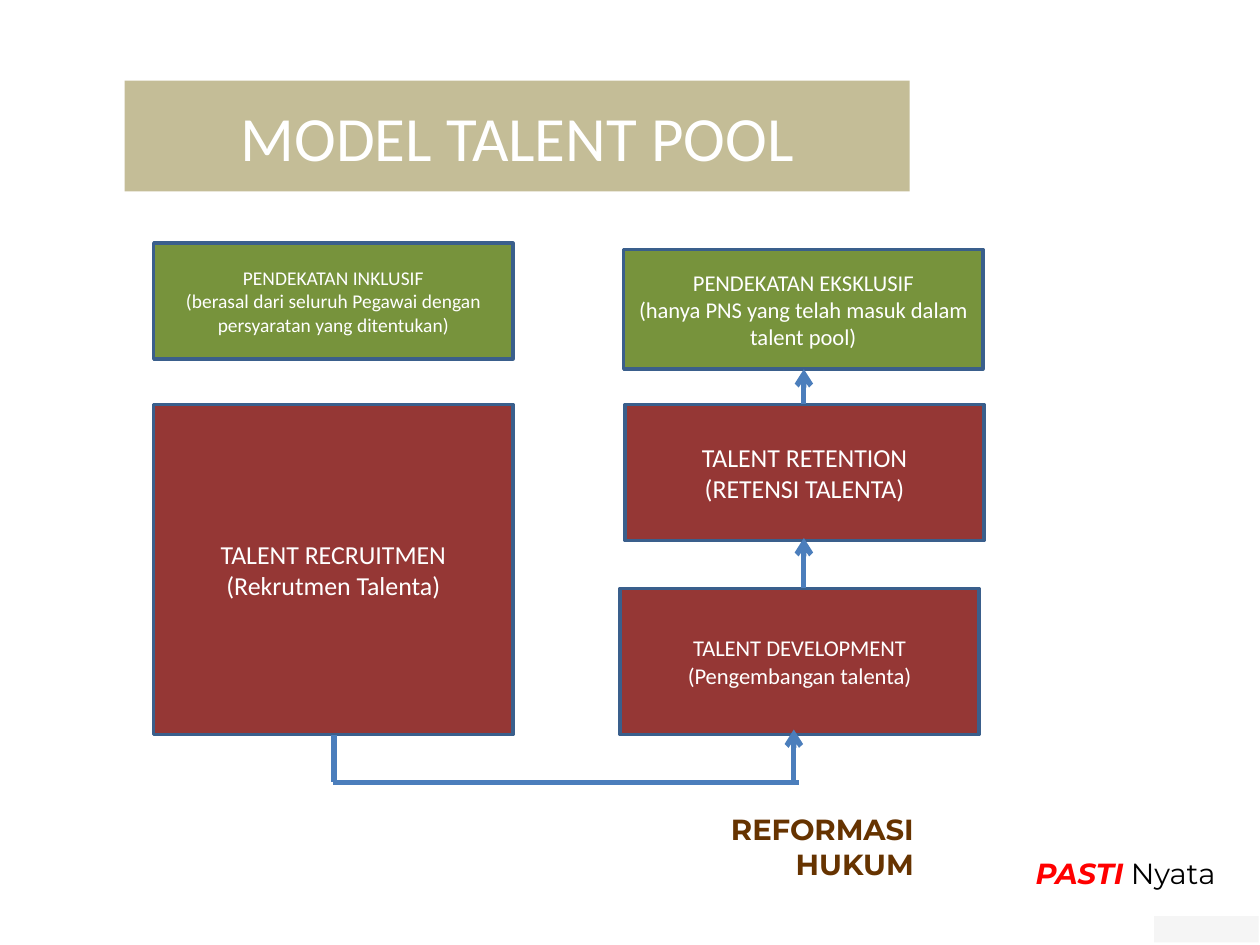
from lxml.etree import SubElement
from pptx import Presentation
from pptx.dml.color import RGBColor
from pptx.enum.shapes import MSO_CONNECTOR, MSO_SHAPE
from pptx.enum.text import MSO_ANCHOR, PP_ALIGN
from pptx.oxml.ns import qn
from pptx.util import Inches, Pt

COLORS = {
    "title": "C4BD97", "approach": "77933C", "stage": "953735",
    "border": "3A5F8C", "arrow": "4B7EBC", "corner": "F5F5F5",
    "white": "FFFFFF", "red": "FF0000", "black": "000000", "brown": "663300",
}


def rgb(name):
    return RGBColor.from_string(COLORS[name])


def add_run(p, text, color, **font):
    r = p.add_run()
    r.text = text
    r.font.color.rgb = rgb(color)
    for name, value in font.items():
        setattr(r.font, name, value)


prs = Presentation()
prs.slide_width, prs.slide_height = Inches(10), Inches(7.5)
s = prs.slides.add_slide(prs.slide_layouts[6])

# Filled boxes: left, top, width, height, fill, border, text size, lines
BOX_W = 2.85
boxes = [
    (9.16, 7.27, 0.83, 0.21, "corner", False, 0, []),
    (0.99, 0.64, 6.23, 0.88, "title", False, 36, ["MODEL TALENT POOL"]),
    (1.22, 1.93, BOX_W, 0.92, "approach", True, 11.1,
     ["PENDEKATAN INKLUSIF",
      "(berasal dari seluruh Pegawai dengan persyaratan yang ditentukan)"]),
    (4.95, 1.98, BOX_W, 0.95, "approach", True, 12.9,
     ["PENDEKATAN EKSKLUSIF", "(hanya PNS yang telah masuk dalam talent pool)"]),
    (1.22, 3.21, BOX_W, 2.62, "stage", True, 14.8,
     ["TALENT RECRUITMEN (Rekrutmen Talenta)"]),
    (4.96, 3.21, BOX_W, 1.08, "stage", True, 14.8,
     ["TALENT RETENTION", "(RETENSI TALENTA)"]),
    (4.92, 4.67, BOX_W, 1.16, "stage", True, 12.9,
     ["TALENT DEVELOPMENT", "(Pengembangan talenta)"]),
]
for *place, fill, border, size, lines in boxes:
    sp = s.shapes.add_shape(MSO_SHAPE.RECTANGLE, *map(Inches, place))
    sp.shadow.inherit = False
    sp.fill.solid()
    sp.fill.fore_color.rgb = rgb(fill)
    if border:
        sp.line.color.rgb = rgb("border")
        sp.line.width = Pt(2)
    else:
        sp.line.fill.background()
    tf = sp.text_frame
    tf.word_wrap = True
    tf.vertical_anchor = MSO_ANCHOR.MIDDLE
    for i, line in enumerate(lines):
        p = tf.add_paragraph() if i else tf.paragraphs[0]
        p.alignment = PP_ALIGN.CENTER
        add_run(p, line, "white", name="Calibri", size=Pt(size))

# Flow from recruitment up to the exclusive approach: x1, y1, x2, y2, arrowhead
flow = [
    (6.38, 3.21, 6.38, 2.93, True),
    (6.38, 4.67, 6.38, 4.27, True),
    (2.65, 5.83, 2.65, 6.21, False),
    (2.64, 6.21, 6.34, 6.21, False),
    (6.3, 6.21, 6.3, 5.79, True),
]
for *ends, arrowhead in flow:
    cx = s.shapes.add_connector(MSO_CONNECTOR.STRAIGHT, *map(Inches, ends))
    cx.line.color.rgb = rgb("arrow")
    cx.line.width = Pt(3)
    if arrowhead:
        SubElement(cx.line._get_or_add_ln(), qn("a:tailEnd"), type="arrow")
    SubElement(cx._element.spPr, qn("a:effectLst"))

# Slogans: place, alignment, paragraphs of (text, colour, bold, italic) runs
slogans = [
    ((8.12, 6.74, 1.78, 0.38), PP_ALIGN.LEFT,
     [[("PASTI", "red", True, True), (" Nyata", "black", False, False)]]),
    ((5.61, 6.39, 1.74, 0.66), PP_ALIGN.RIGHT,
     [[("REFORMASI", "brown", True, False)], [("HUKUM", "brown", True, False)]]),
]
for place, align, paragraphs in slogans:
    tf = s.shapes.add_textbox(*map(Inches, place)).text_frame
    tf.word_wrap = False
    for i, runs in enumerate(paragraphs):
        p = tf.add_paragraph() if i else tf.paragraphs[0]
        p.alignment = align
        for text, color, bold, italic in runs:
            add_run(p, text, color, name="Montserrat", size=Pt(16.6),
                    bold=bold, italic=italic)

prs.save("out.pptx")
